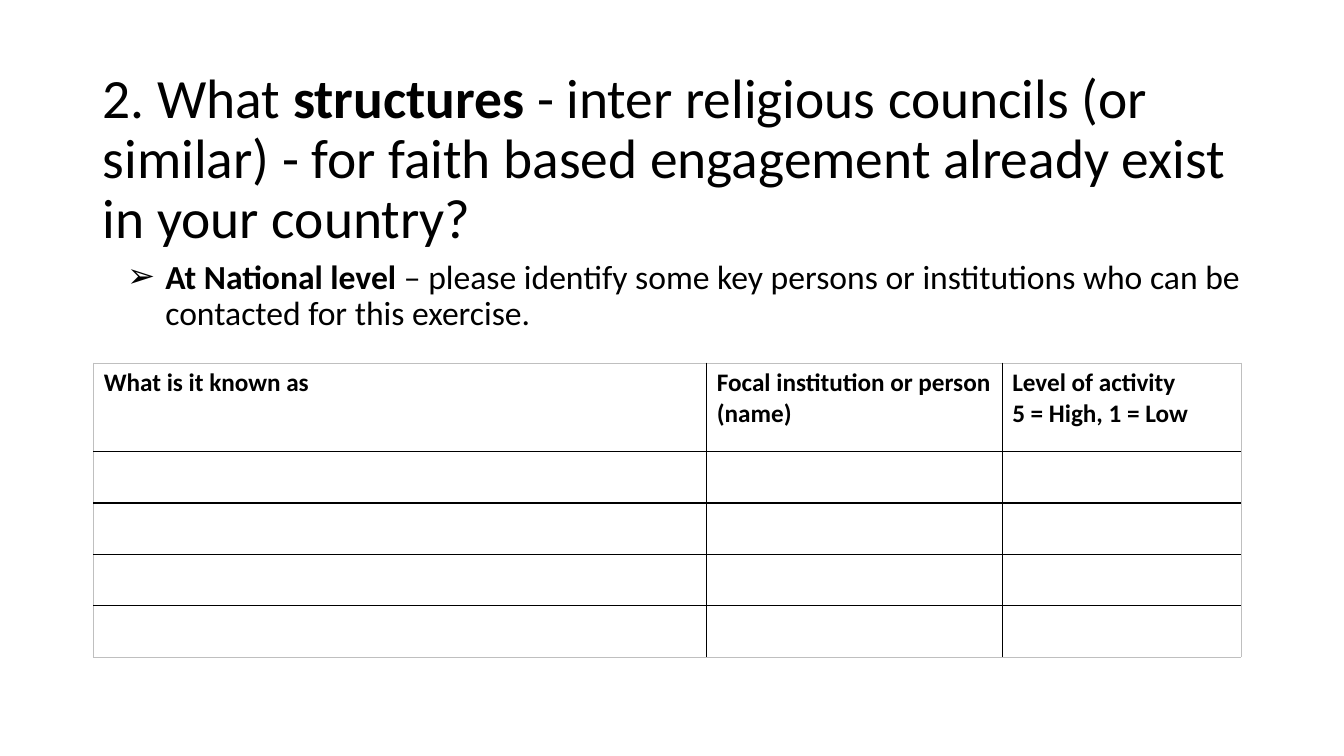
from pptx import Presentation
from pptx.dml.color import RGBColor
from pptx.enum.text import MSO_ANCHOR as Anchor, MSO_AUTO_SIZE as AutoSize, PP_ALIGN as Align
from pptx.oxml.ns import qn
from pptx.util import Inches, Pt
from lxml.etree import SubElement

BLACK = RGBColor(0, 0, 0)
EDGE_GREY = RGBColor(0xBF, 0xBF, 0xBF)
FONT = "Calibri"
MARGIN, TEXT_WIDTH = 0.92, 11.5
COLUMNS = (6.08, 2.93, 2.37)
HEADER_HEIGHT, ANSWER_HEIGHT, ANSWERS = 0.88, 0.51, 4
HEADINGS = (
    "What is it known as",
    "Focal institution or person (name)",
    "Level of activity\n5 = High, 1 = Low",
)


def style(paragraph, size, bold=None):
    """Set the font of a whole paragraph."""
    font = paragraph.font
    font.name, font.size, font.bold = FONT, Pt(size), bold
    font.color.rgb = BLACK


def fill_placeholder(holder, top, height, size, anchor, runs):
    """Place a text placeholder and write (text, bold) runs into it."""
    holder.left, holder.top = Inches(MARGIN), Inches(top)
    holder.width, holder.height = Inches(TEXT_WIDTH), Inches(height)
    frame = holder.text_frame
    frame.word_wrap, frame.auto_size = True, AutoSize.NONE
    frame.vertical_anchor = anchor
    paragraph = frame.paragraphs[0]
    paragraph.alignment, paragraph.line_spacing = Align.LEFT, 0.9
    style(paragraph, size)
    for text, bold in runs:
        run = paragraph.add_run()
        run.text, run.font.bold = text, bold
    return paragraph


def add_arrow_bullet(paragraph):
    """Give a second-level paragraph a hanging arrow bullet."""
    paragraph.level, paragraph.space_before = 1, Pt(5)
    properties = paragraph._p.get_or_add_pPr()
    properties.set("marL", str(Inches(0.62)))
    properties.set("indent", str(Inches(-0.38)))
    bullet = properties.makeelement(qn("a:buChar"), {"char": "➢"})
    properties.insert_element_before(bullet, "a:tabLst", "a:defRPr", "a:extLst")


def add_border(cell, side, on_edge):
    """Draw one cell border, lighter on the outer edge of the table."""
    width, color = (Pt(0.5), EDGE_GREY) if on_edge else (Pt(1), BLACK)
    line = SubElement(cell._tc.get_or_add_tcPr(), qn(f"a:ln{side}"), w=str(width))
    SubElement(SubElement(line, qn("a:solidFill")), qn("a:srgbClr"), val=str(color))


def add_answer_table(slide):
    """Add the table with a heading row and empty answer rows."""
    heights = (HEADER_HEIGHT,) + (ANSWER_HEIGHT,) * ANSWERS
    table = slide.shapes.add_table(
        len(heights), len(COLUMNS), Inches(0.93), Inches(3.6),
        Inches(sum(COLUMNS)), Inches(sum(heights))).table
    table.first_row = table.horz_banding = False
    for column, width in zip(table.columns, COLUMNS):
        column.width = Inches(width)
    for r, height in enumerate(heights):
        table.rows[r].height = Inches(height)
        for c in range(len(COLUMNS)):
            cell = table.cell(r, c)
            edges = {"L": c == 0, "R": c == len(COLUMNS) - 1,
                     "T": r == 0, "B": r == len(heights) - 1}
            for side, on_edge in edges.items():
                add_border(cell, side, on_edge)
            cell.fill.background()
    for c, heading in enumerate(HEADINGS):
        frame = table.cell(0, c).text_frame
        frame.text = heading
        for paragraph in frame.paragraphs:
            style(paragraph, 18, True)


def main():
    """Build and save the slide."""
    deck = Presentation()
    deck.slide_width, deck.slide_height = Inches(13.33), Inches(7.5)
    slide = deck.slides.add_slide(deck.slide_layouts[1])
    question, instruction = slide.placeholders
    fill_placeholder(question, 0.87, 1.45, 39.6, Anchor.MIDDLE, (
        ("2. What ", False), ("structures", True),
        (" - inter religious councils (or similar) - for faith based engagement"
         " already exist in your country?", False)))
    add_arrow_bullet(fill_placeholder(instruction, 2.53, 0.86, 24, Anchor.TOP, (
        ("At National level", True),
        (" – please identify some key persons or institutions who can be"
         " contacted for this exercise.", False))))
    add_answer_table(slide)
    deck.save("out.pptx")


if __name__ == "__main__":
    main()
